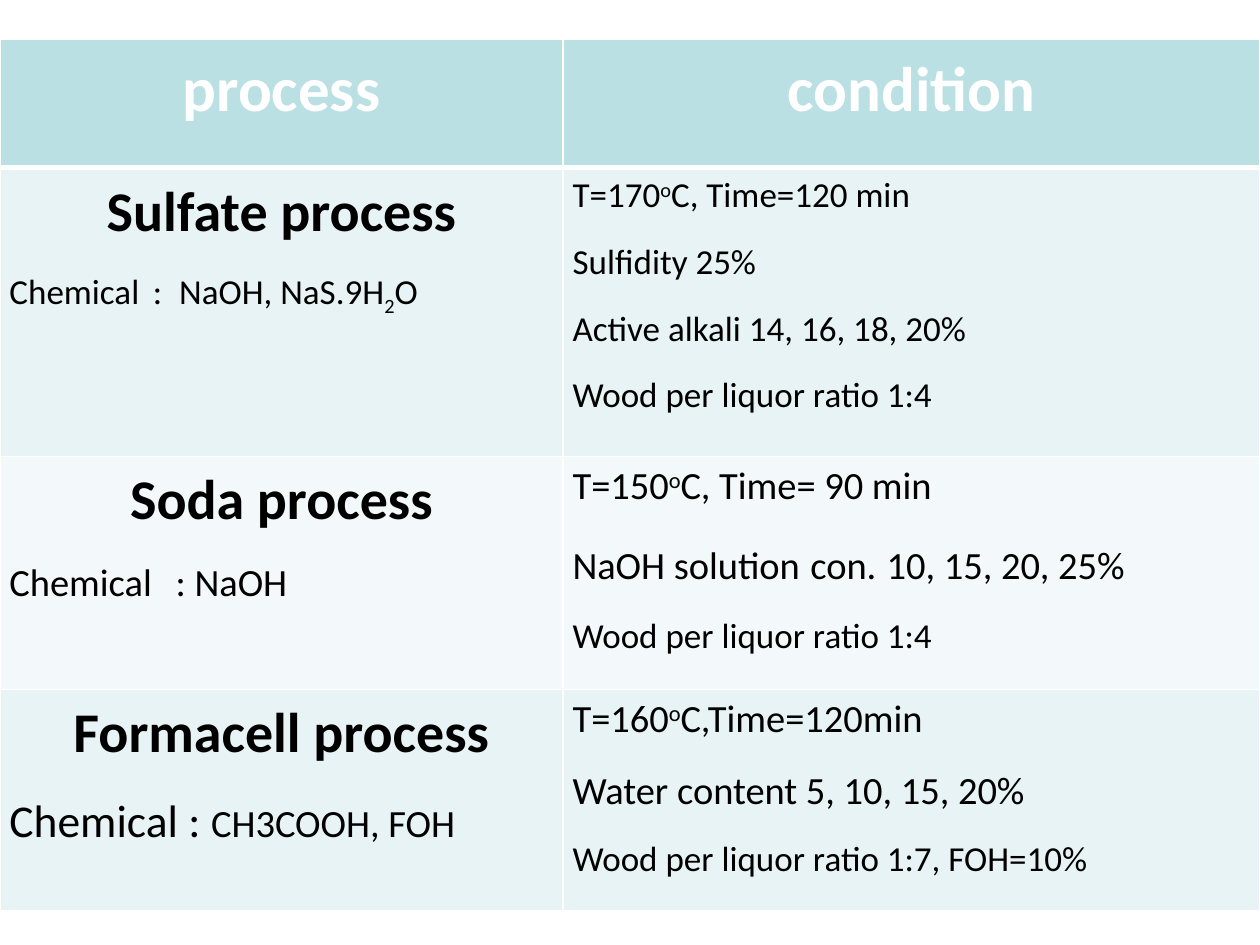
import pptx
import pptx.dml.color
import pptx.enum.text
import pptx.oxml
import pptx.util
from pptx.oxml.ns import qn

Pt = pptx.util.Pt
ALIGN = pptx.enum.text.PP_ALIGN
WHITE, BLACK = "FFFFFF", "000000"
HEADER_FILL, BAND_FILLS = "BBE0E3", ("E7F3F4", "F3F9FA")
COLUMN_WIDTHS = (321.8, 398.2)
ROW_HEIGHTS = (73.4, 164.9, 133.2, 126.7)
RATIO = "Wood per liquor ratio "

# name, chemical runs (text, size, baseline), tab stops, condition lines
PROCESSES = [
    ("Sulfate process",
     [("Chemical\t:\tNaOH, NaS.9H", 20), ("2", 20, -25), ("O", 20)], (82, 97),
     [[("T=170", 20), ("o", 20, 30), ("C, Time=120 min", 20)],
      [("Sulfidity 25%", 20)],
      [("Active alkali 14, 16, 18, 20%", 20)],
      [(RATIO + "1:4", 20)]]),
    ("Soda process",
     [("Chemical\t: NaOH", 22)], (95,),
     [[("T=150", 22), ("o", 22, 30), ("C, Time= 90 min", 22)],
      [("NaOH solution", 22), (" ", 26), ("con.", 22), (" ", 26),
       ("10, 15, 20, 25%", 22)],
      [(RATIO + "1:4", 20)]]),
    ("Formacell process",
     [("Chemical : ", 26), ("CH3COOH, FOH", 22)], (),
     [[("T=160", 22), ("o", 22, 30), ("C,Time=120min", 22)],
      [("Water content 5, 10, 15, 20%", 22)],
      [(RATIO + "1:7, FOH=10%", 20)]]),
]


def rgb(color):
    return pptx.dml.color.RGBColor.from_string(color)


def add_run(p, text, size, baseline=0, bold=False, color=BLACK):
    """Add a run; baseline is the raise or drop in percent."""
    r = p.add_run()
    r.text = text
    r.font.name = "Calibri"
    r.font.size = Pt(size)
    r.font.bold = bold
    r.font.color.rgb = rgb(color)
    if baseline:
        r.font._element.set("baseline", str(baseline * 1000))


def format_paragraph(p, align=ALIGN.LEFT, tabs=()):
    p.alignment = align
    p.line_spacing = 1.15
    p.space_after = Pt(10)
    if tabs:
        p_pr = p._p.get_or_add_pPr()
        tab_list = pptx.oxml.parse_xml(
            '<a:tabLst xmlns:a="http://schemas.openxmlformats.org/drawingml/2006/main"/>')
        for position in tabs:
            tab = tab_list.makeelement(qn("a:tab"), {"pos": str(Pt(position)), "algn": "l"})
            tab_list.append(tab)
        p_pr.append(tab_list)


def add_title(cell, text, size, color=BLACK):
    p = cell.text_frame.paragraphs[0]
    format_paragraph(p, ALIGN.CENTER)
    add_run(p, text, size, bold=True, color=color)


def add_line(p, runs, tabs=()):
    format_paragraph(p, tabs=tabs)
    for run in runs:
        add_run(p, *run)


def style_cell(cell, fill, bottom=1):
    """Set margins, fill and white borders, the bottom one of the given width."""
    cell.margin_left = cell.margin_right = Pt(5.4)
    cell.margin_top = cell.margin_bottom = 0
    tc_pr = cell._tc.get_or_add_tcPr()
    for side, width in (("L", 1), ("R", 1), ("T", 1), ("B", bottom)):
        tc_pr.append(pptx.oxml.parse_xml(
            f'<a:ln{side} xmlns:a="http://schemas.openxmlformats.org/drawingml/2006/main" '
            f'w="{Pt(width)}"><a:solidFill><a:srgbClr val="{WHITE}"/></a:solidFill></a:ln{side}>'))
    cell.fill.solid()
    cell.fill.fore_color.rgb = rgb(fill)


def add_process_table(slide, left, top, widths, heights):
    table = slide.shapes.add_table(
        len(heights), len(widths), Pt(left), Pt(top),
        Pt(sum(widths)), Pt(sum(heights))).table
    for column, width in zip(table.columns, widths):
        column.width = Pt(width)
    for row, height in zip(table.rows, heights):
        row.height = Pt(height)

    for cell, heading in zip(table.rows[0].cells, ("process", "condition")):
        style_cell(cell, HEADER_FILL, bottom=3)
        add_title(cell, heading, 36, WHITE)

    for i, (name, chemical, tabs, conditions) in enumerate(PROCESSES):
        process, condition = table.rows[i + 1].cells
        for cell in (process, condition):
            style_cell(cell, BAND_FILLS[i % 2])
            if i == 0:
                cell._tc.tcPr.find(qn("a:lnT")).set("w", str(Pt(3)))
        add_title(process, name, 32)
        add_line(process.text_frame.add_paragraph(), chemical, tabs)
        tf = condition.text_frame
        for j, runs in enumerate(conditions):
            add_line(tf.add_paragraph() if j else tf.paragraphs[0], runs)


def main():
    prs = pptx.Presentation()
    prs.slide_width, prs.slide_height = Pt(720), Pt(540)
    slide = prs.slides.add_slide(prs.slide_layouts[6])
    add_process_table(slide, 0, 22.5, COLUMN_WIDTHS, ROW_HEIGHTS)
    prs.save("out.pptx")


if __name__ == "__main__":
    main()
